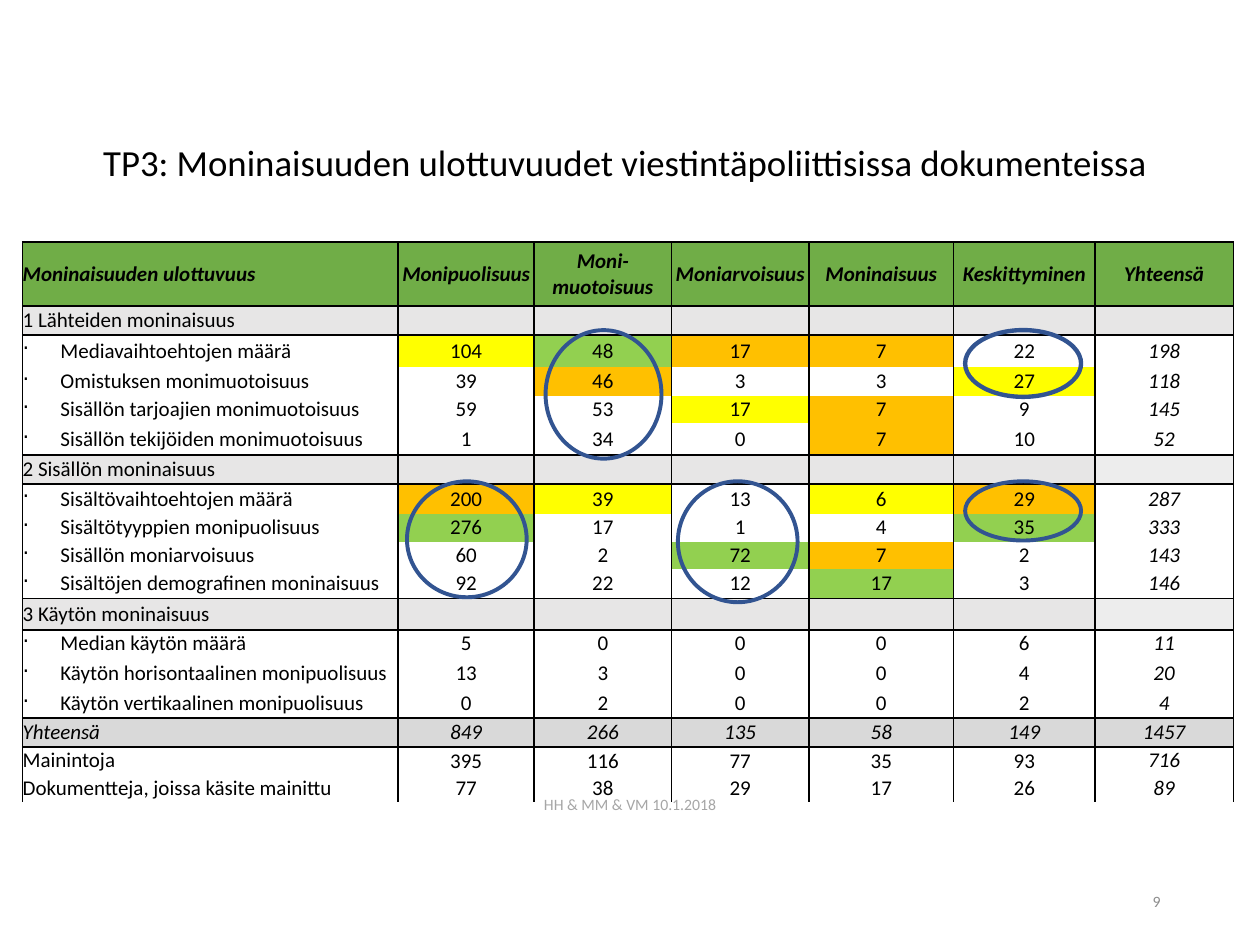
import pptx
import pptx.util
import pptx.dml.color
import pptx.enum.shapes
import pptx.enum.text
import pptx.oxml.ns
import lxml.etree

Inches = pptx.util.Inches
Pt = pptx.util.Pt
RGB = pptx.dml.color.RGBColor
ALIGN = pptx.enum.text.PP_ALIGN
ANCHOR = pptx.enum.text.MSO_ANCHOR
qn = pptx.oxml.ns.qn

BLACK = RGB(0, 0, 0)
HEAD = RGB(0x70, 0xAD, 0x47)
BAND = RGB(0xE7, 0xE6, 0xE6)
PALE = RGB(0xED, 0xED, 0xED)
TOTAL = RGB(0xD9, 0xD9, 0xD9)
RING = RGB(0x32, 0x54, 0x91)
NOTE = RGB(0xA6, 0xA6, 0xA6)
PAGE = RGB(0x8C, 0x8C, 0x8C)
MARKS = {
    "y": RGB(0xFF, 0xFF, 0x00),
    "g": RGB(0x92, 0xD0, 0x50),
    "o": RGB(0xFF, 0xC0, 0x00),
    "-": None,
}
FONT = "Calibri"
PLAIN_STYLE = "{2D5ABB26-0587-4C30-8999-92F81FD0307C}"

WIDTHS = [2.98, 1.08, 1.09, 1.09, 1.15, 1.12, 1.1]
HEIGHTS = [0.51, 0.23, 0.25, 0.23, 0.22, 0.25, 0.23, 0.24, 0.22,
           0.22, 0.23, 0.25, 0.22, 0.25, 0.23, 0.23, 0.22, 0.22]

# Kind of row, label, values, highlight of each value column
ROWS = [
    ("head", "Moninaisuuden ulottuvuus",
     ["Monipuolisuus", "Moni-muotoisuus", "Moniarvoisuus", "Moninaisuus",
      "Keskittyminen", "Yhteensä"], ""),
    ("band", "1 Lähteiden moninaisuus", [""] * 6, ""),
    ("item", "Mediavaihtoehtojen määrä", [104, 48, 17, 7, 22, 198], "ygoo--"),
    ("item", "Omistuksen monimuotoisuus", [39, 46, 3, 3, 27, 118], "-o--y-"),
    ("item", "Sisällön tarjoajien monimuotoisuus", [59, 53, 17, 7, 9, 145], "--yo--"),
    ("item", "Sisällön tekijöiden monimuotoisuus", [1, 34, 0, 7, 10, 52], "---o--"),
    ("band", "2 Sisällön moninaisuus", [""] * 6, ""),
    ("item", "Sisältövaihtoehtojen määrä", [200, 39, 13, 6, 29, 287], "oy-yo-"),
    ("item", "Sisältötyyppien monipuolisuus", [276, 17, 1, 4, 35, 333], "g---g-"),
    ("item", "Sisällön moniarvoisuus", [60, 2, 72, 7, 2, 143], "--go--"),
    ("item", "Sisältöjen demografinen moninaisuus", [92, 22, 12, 17, 3, 146], "---g--"),
    ("band", "3 Käytön moninaisuus", [""] * 6, ""),
    ("item", "Median käytön määrä", [5, 0, 0, 0, 6, 11], "------"),
    ("item", "Käytön horisontaalinen monipuolisuus", [13, 3, 0, 0, 4, 20], "------"),
    ("item", "Käytön vertikaalinen monipuolisuus", [0, 2, 0, 0, 2, 4], "------"),
    ("total", "Yhteensä", [849, 266, 135, 58, 149, 1457], ""),
    ("count", "Mainintoja", [395, 116, 77, 35, 93, 716], "------"),
    ("count", "Dokumentteja, joissa käsite mainittu", [77, 38, 29, 17, 26, 89], "------"),
]

RINGS = [
    (3.23, 3.82, 0.95, 0.92, 2.25),
    (4.33, 2.62, 0.92, 1.02, 2.25),
    (5.38, 3.82, 0.95, 0.96, 2.25),
    (7.66, 2.62, 0.92, 0.53, 2.5),
    (7.66, 3.82, 0.92, 0.47, 2.25),
]


def style(para, size, color, align, bold=False, italic=False):
    para.alignment = align
    font = para.font
    font.name = FONT
    font.size = Pt(size)
    font.color.rgb = color
    font.bold = bold
    font.italic = italic


def place(shape, left, top, width, height):
    shape.left, shape.top = Inches(left), Inches(top)
    shape.width, shape.height = Inches(width), Inches(height)


def add_title(slide, text):
    title = slide.shapes.title
    place(title, 0.65, 0.92, 8.62, 0.78)
    frame = title.text_frame
    frame.text = text
    frame.auto_size = pptx.enum.text.MSO_AUTO_SIZE.NONE
    frame.vertical_anchor = ANCHOR.MIDDLE
    para = frame.paragraphs[0]
    style(para, 21, BLACK, ALIGN.CENTER)
    para.line_spacing = 0.9


def add_text(slide, text, box, color, align, anchor):
    frame = slide.shapes.add_textbox(*map(Inches, box)).text_frame
    frame.word_wrap = True
    frame.vertical_anchor = anchor
    frame.text = text
    style(frame.paragraphs[0], 9, color, align)


def add_ring(slide, left, top, width, height, weight):
    oval = pptx.enum.shapes.MSO_SHAPE.OVAL
    ring = slide.shapes.add_shape(oval, *map(Inches, (left, top, width, height)))
    ring.shadow.inherit = False
    ring.fill.background()
    ring.line.color.rgb = RING
    ring.line.width = Pt(weight)


def set_edges(cell, sides):
    props = cell._tc.get_or_add_tcPr()
    for side in sides:
        line = lxml.etree.SubElement(props, qn("a:ln" + side), w=str(Pt(1)))
        fill = lxml.etree.SubElement(line, qn("a:solidFill"))
        lxml.etree.SubElement(fill, qn("a:srgbClr"), val=str(BLACK))


def set_bullet(para):
    props = para._p.get_or_add_pPr()
    props.set("marL", str(Inches(0.3)))
    props.set("indent", str(-Inches(0.3)))
    mark = lxml.etree.Element(qn("a:buChar"), char="·")
    props.insert(list(props).index(props.find(qn("a:defRPr"))), mark)


def pick_fill(kind, row, col, marks):
    if kind == "band":
        return PALE if col == 6 and row > 1 else BAND
    if kind in ("head", "total"):
        return HEAD if kind == "head" else TOTAL
    return MARKS[marks[col - 1]] if col else None


def fill_cell(cell, value, kind, col, color):
    cell.margin_left = cell.margin_right = 0
    cell.margin_top = cell.margin_bottom = 0
    cell.vertical_anchor = ANCHOR.MIDDLE
    cell.text = str(value)
    para = cell.text_frame.paragraphs[0]
    italic = kind in ("head", "total") or (col == 6 and kind != "band")
    align = ALIGN.CENTER if col else ALIGN.LEFT
    style(para, 12, BLACK, align, kind == "head", italic)
    if value == "":
        # Keeps an empty cell from stretching its row
        lxml.etree.SubElement(para._p, qn("a:endParaRPr"), sz="1200")
    if kind == "item" and col == 0:
        set_bullet(para)
    set_edges(cell, "LR" if kind in ("item", "count") else "LRTB")
    if color is None:
        cell.fill.background()
    else:
        cell.fill.solid()
        cell.fill.fore_color.rgb = color


def add_grid(slide):
    box = map(Inches, (0.18, 1.92, sum(WIDTHS), sum(HEIGHTS)))
    table = slide.shapes.add_table(len(ROWS), len(WIDTHS), *box).table
    table.horz_banding = False
    table._tbl.tblPr.find(qn("a:tableStyleId")).text = PLAIN_STYLE
    for col, width in zip(table.columns, WIDTHS):
        col.width = Inches(width)
    for row, height in zip(table.rows, HEIGHTS):
        row.height = Inches(height)
    for row, (kind, label, values, marks) in enumerate(ROWS):
        for col, value in enumerate([label] + values):
            color = pick_fill(kind, row, col, marks)
            fill_cell(table.cell(row, col), value, kind, col, color)
    for col in range(1, 6):
        table.cell(16, col).vertical_anchor = ANCHOR.BOTTOM


def main():
    deck = pptx.Presentation()
    deck.slide_width, deck.slide_height = Inches(10), Inches(7.5)
    slide = deck.slides.add_slide(deck.slide_layouts[5])
    add_title(slide, "TP3: Moninaisuuden ulottuvuudet viestintäpoliittisissa dokumenteissa")
    add_text(slide, "HH & MM & VM 10.1.2018", (3.59, 6.26, 2.82, 0.25),
             NOTE, ALIGN.CENTER, ANCHOR.TOP)
    add_grid(slide)
    for ring in RINGS:
        add_ring(slide, *ring)
    add_text(slide, "9", (7.06, 6.95, 2.25, 0.4), PAGE, ALIGN.RIGHT, ANCHOR.MIDDLE)
    deck.save("out.pptx")


if __name__ == "__main__":
    main()
